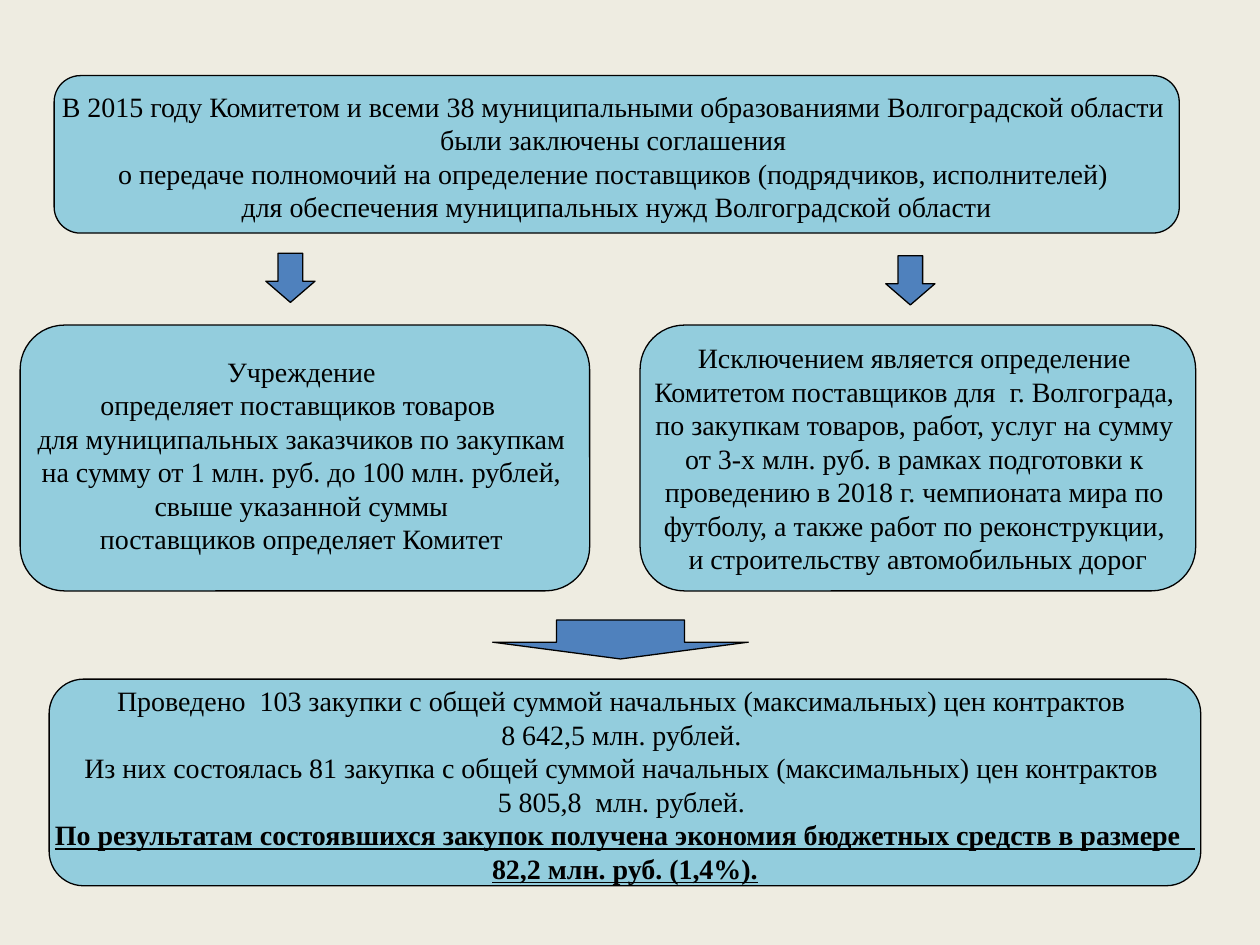
from dataclasses import dataclass

from pptx import Presentation
from pptx.dml.color import RGBColor
from pptx.enum.shapes import MSO_SHAPE
from pptx.enum.text import MSO_ANCHOR, PP_ALIGN
from pptx.util import Inches, Pt

ROUNDED_BOX = MSO_SHAPE.ROUNDED_RECTANGLE
DOWN_ARROW = MSO_SHAPE.DOWN_ARROW
MIDDLE = MSO_ANCHOR.MIDDLE
CENTER = PP_ALIGN.CENTER


@dataclass(frozen=True)
class Theme:
    background: RGBColor = RGBColor(0xEE, 0xEC, 0xE1)
    box: RGBColor = RGBColor(0x93, 0xCD, 0xDD)
    arrow: RGBColor = RGBColor(0x4F, 0x81, 0xBD)
    ink: RGBColor = RGBColor(0, 0, 0)
    font: str = "Times New Roman"
    text_size: float = 16
    line_width: float = 0.75


AGREEMENTS = [
    "В 2015 году Комитетом и всеми 38 муниципальными образованиями Волгоградской области ",
    "были заключены соглашения ",
    "о передаче полномочий на определение поставщиков (подрядчиков, исполнителей) ",
    "для обеспечения муниципальных нужд Волгоградской области",
]
INSTITUTION = [
    "Учреждение ",
    "определяет поставщиков товаров  ",
    "для муниципальных заказчиков по закупкам ",
    "на сумму от 1 млн. руб. до 100 млн. рублей, ",
    "свыше указанной суммы ",
    "поставщиков определяет Комитет ",
]
EXCEPTION = [
    "Исключением является определение ",
    "Комитетом поставщиков для  г. Волгограда, ",
    "по закупкам товаров, работ, услуг на сумму ",
    "от 3-х млн. руб. в рамках подготовки к ",
    "проведению в 2018 г. чемпионата мира по ",
    "футболу, а также работ по реконструкции, ",
    "и строительству автомобильных дорог",
]
PURCHASES = [
    "Проведено  103 закупки с общей суммой начальных (максимальных) цен контрактов ",
    "8 642,5 млн. рублей. ",
    "Из них состоялась 81 закупка с общей суммой начальных (максимальных) цен контрактов ",
    "5 805,8  млн. рублей. ",
]
SAVINGS = [
    "По результатам состоявшихся закупок получена экономия бюджетных средств в размере  ",
    "82,2 млн. руб. (1,4%).",
]


def write_lines(text_frame, lines, *, theme, tight=True, emphasis=False):
    """Append one centred paragraph per line, filling the empty first one."""
    for line in lines:
        is_empty = not text_frame.text
        paragraph = text_frame.paragraphs[0] if is_empty else text_frame.add_paragraph()
        paragraph.alignment = CENTER
        if tight:
            paragraph.line_spacing = 0.8
            paragraph.space_before = Pt(3.8)
        run = paragraph.add_run()
        run.text = line
        font = run.font
        font.name = theme.font
        font.size = Pt(theme.text_size)
        font.color.rgb = theme.ink
        if emphasis:
            font.bold = font.underline = True


class SlideBuilder:
    def __init__(self, slide, theme):
        self.slide = slide
        self.theme = theme
        fill = slide.background.fill
        fill.solid()
        fill.fore_color.rgb = theme.background

    def outlined_shape(self, kind, bounds, color):
        shape = self.slide.shapes.add_shape(kind, *map(Inches, bounds))
        shape.shadow.inherit = False
        shape.fill.solid()
        shape.fill.fore_color.rgb = color
        shape.line.color.rgb = self.theme.ink
        shape.line.width = Pt(self.theme.line_width)
        return shape

    def box(self, bounds, lines, *, emphasized=(), tight=True, top_inset=0.05):
        shape = self.outlined_shape(ROUNDED_BOX, bounds, self.theme.box)
        text_frame = shape.text_frame
        text_frame.word_wrap = False
        text_frame.vertical_anchor = MIDDLE
        text_frame.margin_top = Inches(top_inset)
        write_lines(text_frame, lines, theme=self.theme, tight=tight)
        write_lines(text_frame, emphasized, theme=self.theme, tight=tight, emphasis=True)

    def arrow(self, bounds):
        shape = self.outlined_shape(DOWN_ARROW, bounds, self.theme.arrow)
        shape.adjustments[1] = 0.43


def main():
    presentation = Presentation()
    presentation.slide_width = Inches(10)
    presentation.slide_height = Inches(7.5)
    slide = presentation.slides.add_slide(presentation.slide_layouts[6])
    builder = SlideBuilder(slide, Theme())

    builder.box((0.43, 0.6, 8.93, 1.25), AGREEMENTS, top_inset=0.13)
    builder.arrow((2.11, 2.01, 0.39, 0.39))
    builder.arrow((7.03, 2.03, 0.39, 0.39))
    builder.box((0.16, 2.58, 4.52, 2.11), INSTITUTION)
    builder.box((5.08, 2.58, 4.41, 2.11), EXCEPTION, tight=False)
    builder.arrow((3.91, 4.92, 2.03, 0.31))
    builder.box((0.39, 5.39, 9.14, 1.64), PURCHASES, emphasized=SAVINGS, top_inset=0.13)

    presentation.save("out.pptx")


if __name__ == "__main__":
    main()
